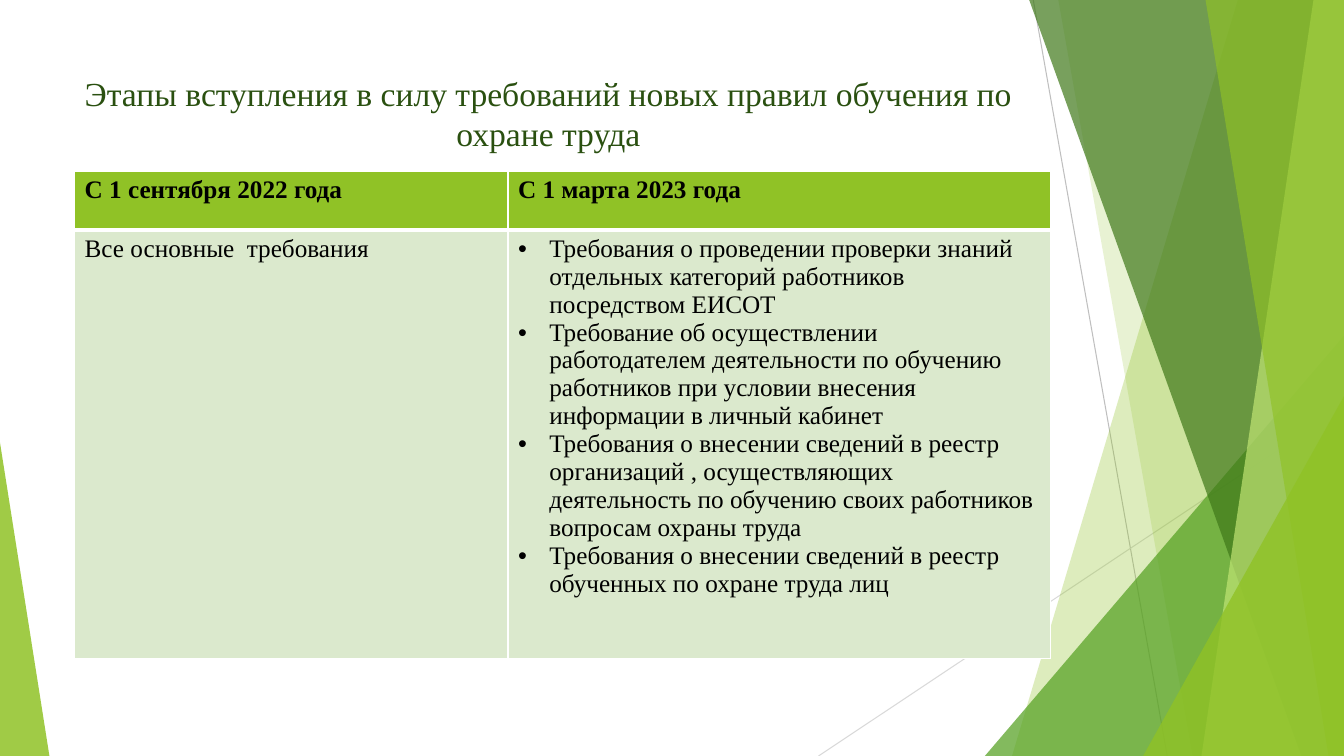
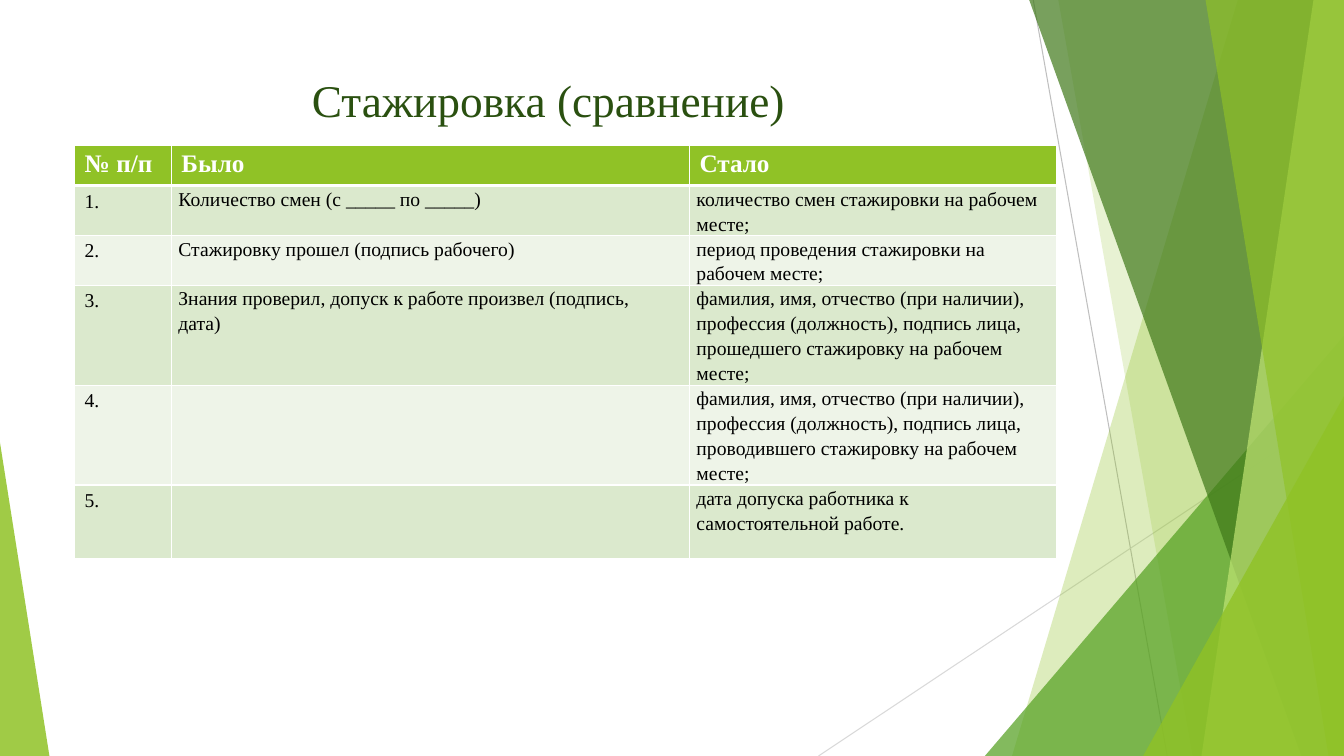
from lxml import etree
from pptx import Presentation
from pptx import util as u
from pptx.dml.color import RGBColor
from pptx.enum import shapes, text
from pptx.oxml.ns import qn

WIDTH, HEIGHT = u.Inches(13.333), u.Inches(7.5)
FONT = "Times New Roman"
WHITE = RGBColor(0xFF, 0xFF, 0xFF)
BLACK = RGBColor(0, 0, 0)
LIME = RGBColor(0x90, 0xC2, 0x26)
PALE_LIME = RGBColor(0xC0, 0xE4, 0x74)
LEAF = RGBColor(0x54, 0xA0, 0x21)
FOREST = RGBColor(0x3F, 0x78, 0x19)
TITLE_GREEN = RGBColor(0x2A, 0x50, 0x10)
ROW_DARK = RGBColor(0xDB, 0xE9, 0xCD)
ROW_LIGHT = RGBColor(0xEE, 0xF4, 0xE8)
GREY = RGBColor(0xBF, 0xBF, 0xBF)
LIGHT_GREY = RGBColor(0xD9, 0xD9, 0xD9)

RAYS = [
    ((76.88, 0), (86.85, 100), GREY),
    ((100, 53.73), (60.9, 100), LIGHT_GREY),
]
FACETS = [
    ("band", (92.1, 75.3), LIME, 30),
    ("band", (78.75, 88.73), LIME, 20),
    ("peak", (73.28, 44.4, 26.72, 1), LEAF, 72),
    ("band", (76.58, 96.83), FOREST, 70),
    ("band", (97.73, 89.4), PALE_LIME, 70),
    ("band", (89.7, 98.85), LIME, 65),
    ("peak", (85.05, 52.4, 14.95, 1), LIME, 80),
    ("peak", (0, 58.53, 3.68, 0), LIME, 85),
]

STAGES = [
    ["С 1 сентября 2022 года", "С 1 марта 2023 года"],
    ["Все основные  требования", [
        "Требования о проведении проверки знаний отдельных категорий работников посредством ЕИСОТ",
        "Требование об осуществлении работодателем деятельности по обучению работников "
        "при условии внесения информации в личный кабинет",
        "Требования о внесении сведений в реестр организаций , осуществляющих деятельность "
        "по обучению своих работников вопросам охраны труда",
        "Требования о внесении сведений в реестр обученных по охране труда лиц",
    ]],
]
PERSON = ("фамилия, имя, отчество (при наличии), профессия (должность), "
          "подпись лица, {} стажировку на рабочем месте;")
INTERNSHIP = [
    ["№ п/п", "Было", "Стало"],
    ["1.", "Количество смен (с _____ по _____)", "количество смен стажировки на рабочем месте;"],
    ["2.", "Стажировку прошел (подпись рабочего)", "период проведения стажировки на рабочем месте;"],
    ["3.", ["Знания проверил, допуск к работе произвел (подпись,", "дата)"],
     PERSON.format("прошедшего")],
    ["4.", "", PERSON.format("проводившего")],
    ["5.", "", "дата допуска работника к самостоятельной работе."],
]


def across(percent):
    return int(WIDTH * percent / 100)


def down(percent):
    return int(HEIGHT * percent / 100)


def place(left, top, width, height):
    return across(left), down(top), across(width), down(height)


def apply(target, values):
    for name, value in values.items():
        setattr(target, name, value)


def style_font(font, size, colour, bold=False):
    apply(font, {"name": FONT, "size": u.Pt(size), "bold": bold})
    font.color.rgb = colour


def tint(shape, colour, opacity):
    shape.shadow.inherit = False
    shape.line.fill.background()
    shape.fill.solid()
    shape.fill.fore_color.rgb = colour
    colour_node = shape.fill._xPr.find(qn("a:solidFill"))[0]
    etree.SubElement(colour_node, qn("a:alpha"), val=str(opacity * 1000))


def add_band(group, top_edge, bottom_edge):
    outline = group.shapes.build_freeform(across(top_edge), 0, scale=1.0)
    outline.add_line_segments(
        [(WIDTH, 0), (WIDTH, HEIGHT), (across(bottom_edge), HEIGHT)], close=True)
    return outline.convert_to_shape()


def add_peak(group, left, top, width, apex):
    peak = group.shapes.add_shape(
        shapes.MSO_SHAPE.ISOSCELES_TRIANGLE, *place(left, top, width, 100 - top))
    peak.adjustments[0] = apex
    return peak


def add_artwork(page):
    group = page.shapes.add_group_shape()
    for start, end, colour in RAYS:
        ray = group.shapes.add_connector(
            shapes.MSO_CONNECTOR.STRAIGHT,
            across(start[0]), down(start[1]), across(end[0]), down(end[1]))
        ray.line.width = u.Pt(0.75)
        ray.line.color.rgb = colour
        etree.SubElement(ray._element.spPr, qn("a:effectLst"))
    makers = {"band": add_band, "peak": add_peak}
    for kind, geometry, colour, opacity in FACETS:
        tint(makers[kind](group, *geometry), colour, opacity)


def add_title(page, wording, size, height):
    title = page.shapes.title
    apply(title, dict(zip(("left", "top", "width", "height"), place(5.55, 8.93, 70.5, height))))
    frame = title.text_frame
    apply(frame, {"word_wrap": True, "auto_size": text.MSO_AUTO_SIZE.NONE,
                  "vertical_anchor": text.MSO_ANCHOR.TOP})
    frame.text = wording
    para = frame.paragraphs[0]
    para.alignment = text.PP_ALIGN.CENTER
    style_font(para.runs[0].font, size, TITLE_GREEN)


def add_borders(cell, top, bottom):
    properties = cell._tc.get_or_add_tcPr()
    edges = (("lnL", 1), ("lnR", 1), ("lnT", top), ("lnB", bottom))
    for position, (edge, points) in enumerate(edges):
        line = etree.Element(qn("a:" + edge), w=str(u.Pt(points)))
        fill = etree.SubElement(line, qn("a:solidFill"))
        etree.SubElement(fill, qn("a:srgbClr"), val=str(WHITE))
        properties.insert(position, line)


def add_bullet(para):
    properties = para._p.get_or_add_pPr()
    indent = u.Inches(0.31)
    properties.set("marL", str(indent))
    properties.set("indent", str(-indent))
    etree.SubElement(properties, qn("a:buFont"), typeface="Arial")
    etree.SubElement(properties, qn("a:buChar"), char="•")


def fill_cell(cell, content, size, colour, bold, spacing=None, bulleted=False):
    lines = content if isinstance(content, list) else [content]
    frame = cell.text_frame
    for index, wording in enumerate(lines):
        para = frame.paragraphs[0] if index == 0 else frame.add_paragraph()
        if spacing:
            para.line_spacing = spacing
        if bulleted:
            add_bullet(para)
        if wording:
            span = para.add_run()
            span.text = wording
            style_font(span.font, size, colour, bold)


def add_table(page, box, columns, rows, content, header_colour, body_size, compact=False):
    left, top, width, height = place(*box)
    table = page.shapes.add_table(len(rows), len(columns), left, top, width, height).table
    for column, share in zip(table.columns, columns):
        column.width = int(width * share / 100)
    for row, share in zip(table.rows, rows):
        row.height = int(height * share / 100)
    for r, line in enumerate(content):
        header = r == 0
        for c, wording in enumerate(line):
            cell = table.cell(r, c)
            cell.fill.solid()
            cell.fill.fore_color.rgb = LIME if header else (ROW_LIGHT, ROW_DARK)[r % 2]
            add_borders(cell, 3 if r == 1 else 1, 3 if header else 1)
            tight = compact and not header and c > 0
            if tight:
                side = u.Inches(0.07)
                apply(cell, {"margin_left": side, "margin_right": side,
                             "margin_top": 0, "margin_bottom": 0})
            fill_cell(cell, wording, 18 if header else body_size,
                      header_colour if header else BLACK, header,
                      1.15 if tight else None,
                      isinstance(wording, list) and not compact)


def start_page(deck, wording, size, height):
    page = deck.slides.add_slide(deck.slide_layouts[5])
    add_title(page, wording, size, height)
    add_artwork(page)
    return page


def add_stages_page(deck):
    page = start_page(
        deck, "Этапы вступления в силу требований новых правил обучения по охране труда", 24, 15.33)
    add_table(page, (5.55, 22.67, 72.6, 64.4), (44.42, 55.58), (12, 88),
              STAGES, BLACK, 18)


def add_internship_page(deck):
    page = start_page(deck, "Стажировка (сравнение)", 32.4, 7.87)
    add_table(page, (5.55, 19.2, 73.05, 54.6), (9.86, 52.77, 37.37),
              (9.8, 12, 12, 24.2, 24.2, 17.8), INTERNSHIP, WHITE, 14, compact=True)


def main():
    deck = Presentation()
    apply(deck, {"slide_width": WIDTH, "slide_height": HEIGHT})
    add_stages_page(deck)
    add_internship_page(deck)
    deck.save("out.pptx")


if __name__ == "__main__":
    main()
